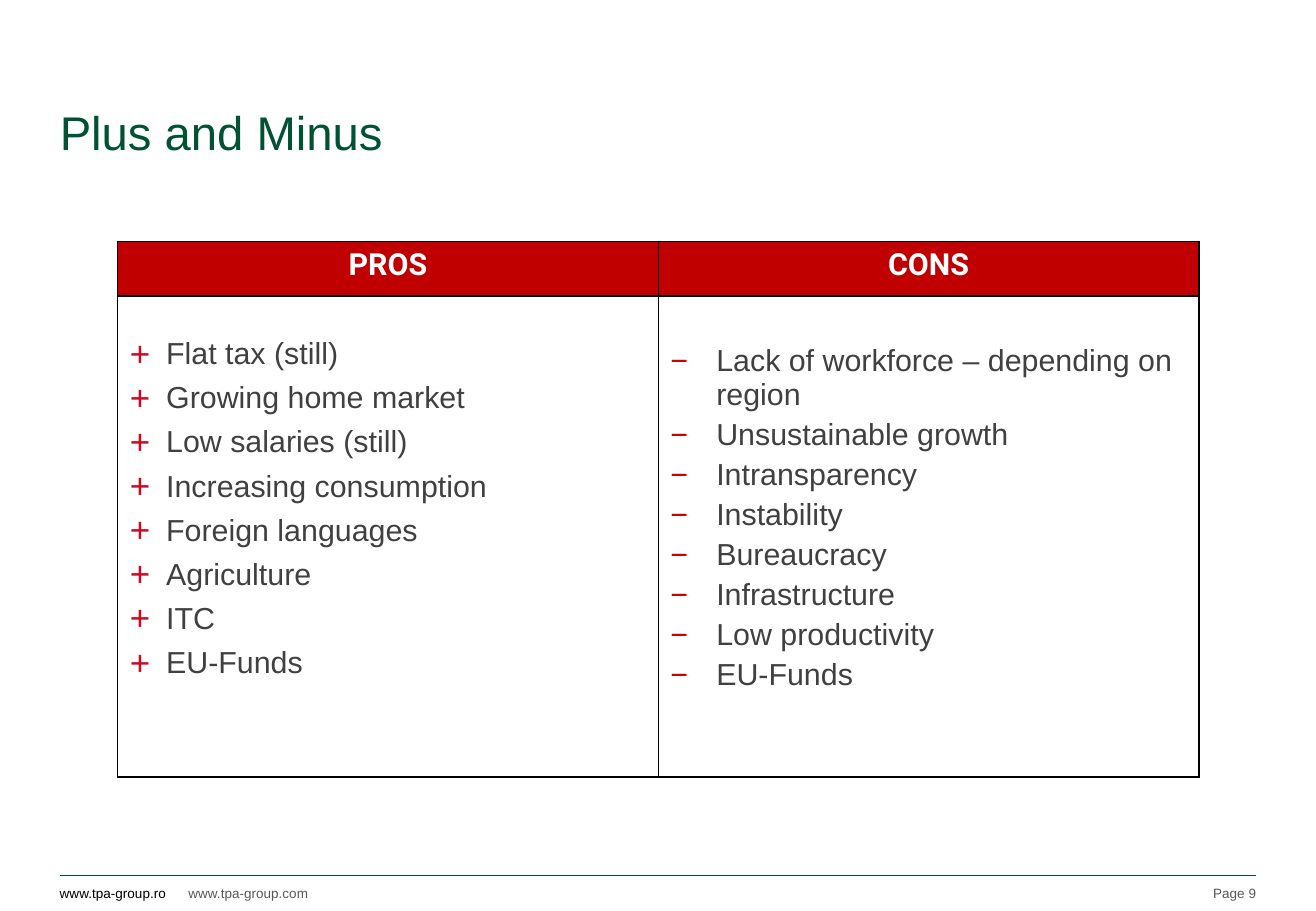
from lxml import etree
from pptx import Presentation
from pptx.dml.color import RGBColor
from pptx.enum.shapes import MSO_CONNECTOR
from pptx.enum.text import MSO_ANCHOR, MSO_AUTO_SIZE, PP_ALIGN
from pptx.oxml.ns import qn
from pptx.util import Cm, Pt

LEFT, CENTER, RIGHT = PP_ALIGN.LEFT, PP_ALIGN.CENTER, PP_ALIGN.RIGHT
TOP, MIDDLE, BOTTOM = MSO_ANCHOR.TOP, MSO_ANCHOR.MIDDLE, MSO_ANCHOR.BOTTOM
STRAIGHT, NO_FIT = MSO_CONNECTOR.STRAIGHT, MSO_AUTO_SIZE.NONE

# Content
TITLE = "Plus and Minus"
COLUMNS = [
    {"heading": "PROS", "bullet": "+", "bullet_color": "CD0921", "bullet_size": 115,
     "indent": Cm(0.76), "top": Cm(0.86),
     "spacing": {"space_before": Pt(0), "space_after": Pt(6)},
     "points": ["Flat tax (still)", "Growing home market", "Low salaries (still)",
                "Increasing consumption", "Foreign languages", "Agriculture",
                "ITC", "EU-Funds"]},
    {"heading": "CONS", "bullet": "−", "bullet_color": "CC0000", "bullet_size": 100,
     "indent": Cm(0.96), "top": Cm(1),
     "spacing": {"space_before": Pt(3.6), "space_after": Pt(0)},
     "points": ["Lack of workforce – depending on region", "Unsustainable growth",
                "Intransparency", "Instability", "Bureaucracy", "Infrastructure",
                "Low productivity", "EU-Funds"]},
]
# text, left, width, style, alignment, anchor, wrap
FOOTER = [
    ("www.tpa-group.ro", Cm(1.25), Cm(2.26), "footer_site", LEFT, MIDDLE, False),
    ("www.tpa-group.com", Cm(3.94), Cm(2.62), "footer", LEFT, MIDDLE, False),
    ("Page 9", Cm(23.9), Cm(2.36), "footer", RIGHT, BOTTOM, True),
]

# Theme
THEME = {
    "green": "005233", "header_fill": "C00000", "border": "000000",
    "title": {"name": "Arial", "size": Pt(28), "bold": False, "color": "005233"},
    "heading": {"name": "Roboto", "size": Pt(18), "bold": True, "color": "FFFFFF"},
    "point": {"name": "Arial", "size": Pt(18), "bold": False, "color": "404040"},
    "footer": {"name": "Arial", "size": Pt(8), "bold": False, "color": "58585A"},
    "footer_site": {"name": "Arial", "size": Pt(8), "bold": False, "color": "000000"},
}

# Layout
MARGIN_LEFT, MARGIN_RIGHT = Cm(1.25), Cm(26.26)
RULE_TOP, FOOTER_TOP, FOOTER_HEIGHT = Cm(18.31), Cm(18.52), Cm(0.33)
TABLE_LEFT, TABLE_TOP, COLUMN_WIDTH = Cm(2.46), Cm(5.05), Cm(11.3)
ROW_HEIGHTS = [Cm(1.14), Cm(10.06)]


def set_all(target, values):
    for key, value in values.items():
        setattr(target, key, value)


def write(paragraph, text, style):
    run = paragraph.add_run()
    run.text = text
    set_all(run.font, {k: v for k, v in THEME[style].items() if k != "color"})
    run.font.color.rgb = RGBColor.from_string(THEME[style]["color"])


def frame_format(frame, anchor, wrap):
    set_all(frame, {"margin_left": 0, "margin_right": 0, "margin_top": 0,
                    "margin_bottom": 0, "vertical_anchor": anchor,
                    "word_wrap": wrap, "auto_size": NO_FIT})


def add_bullet(paragraph, column):
    props = paragraph._p.get_or_add_pPr()
    props.set("marL", str(column["indent"]))
    props.set("indent", str(-column["indent"]))
    color = etree.SubElement(props, qn("a:buClr"))
    etree.SubElement(color, qn("a:srgbClr"), val=column["bullet_color"])
    etree.SubElement(props, qn("a:buSzPct"), val=str(column["bullet_size"] * 1000))
    etree.SubElement(props, qn("a:buFont"), typeface="Arial")
    etree.SubElement(props, qn("a:buChar"), char=column["bullet"])


def add_borders(cell):
    props = cell._tc.get_or_add_tcPr()
    for position, side in enumerate(("lnL", "lnR", "lnT", "lnB")):
        line = etree.Element(qn("a:" + side), w=str(Pt(1)))
        fill = etree.SubElement(line, qn("a:solidFill"))
        etree.SubElement(fill, qn("a:srgbClr"), val=THEME["border"])
        props.insert(position, line)


def add_title(slide):
    title = slide.shapes.title
    set_all(title, {"left": MARGIN_LEFT, "top": Cm(2.16),
                    "width": Cm(20.12), "height": Cm(1.19)})
    frame_format(title.text_frame, TOP, True)
    paragraph = title.text_frame.paragraphs[0]
    paragraph.alignment = LEFT
    write(paragraph, TITLE, "title")


def add_comparison(slide):
    table = slide.shapes.add_table(
        len(ROW_HEIGHTS), len(COLUMNS), TABLE_LEFT, TABLE_TOP,
        COLUMN_WIDTH * len(COLUMNS), sum(ROW_HEIGHTS)).table
    set_all(table, {"first_row": False, "horz_banding": False})
    for row, height in zip(table.rows, ROW_HEIGHTS):
        row.height = height

    for index, column in enumerate(COLUMNS):
        table.columns[index].width = COLUMN_WIDTH
        header, body = table.cell(0, index), table.cell(1, index)

        header.fill.solid()
        header.fill.fore_color.rgb = RGBColor.from_string(THEME["header_fill"])
        heading = header.text_frame.paragraphs[0]
        heading.alignment = CENTER
        write(heading, column["heading"], "heading")

        body.fill.background()
        body.margin_top = column["top"]
        frame = body.text_frame
        for number, point in enumerate(column["points"]):
            paragraph = frame.add_paragraph() if number else frame.paragraphs[0]
            add_bullet(paragraph, column)
            set_all(paragraph, column["spacing"])
            if number == 0:
                paragraph.space_before = Pt(0)
            write(paragraph, point, "point")

        for cell in (header, body):
            add_borders(cell)


def add_footer(slide):
    rule = slide.shapes.add_connector(STRAIGHT, MARGIN_LEFT, RULE_TOP, MARGIN_RIGHT, RULE_TOP)
    rule.line.color.rgb = RGBColor.from_string(THEME["green"])
    rule.line.width = Pt(0.5)
    etree.SubElement(rule._element.spPr, qn("a:effectLst"))
    for text, left, width, style, alignment, anchor, wrap in FOOTER:
        box = slide.shapes.add_textbox(left, FOOTER_TOP, width, FOOTER_HEIGHT)
        frame_format(box.text_frame, anchor, wrap)
        paragraph = box.text_frame.paragraphs[0]
        paragraph.alignment = alignment
        write(paragraph, text, style)


def main():
    deck = Presentation()
    set_all(deck, {"slide_width": Cm(27.51), "slide_height": Cm(19.05)})
    slide = deck.slides.add_slide(deck.slide_layouts[5])
    add_footer(slide)
    add_title(slide)
    add_comparison(slide)
    deck.save("out.pptx")


if __name__ == "__main__":
    main()
